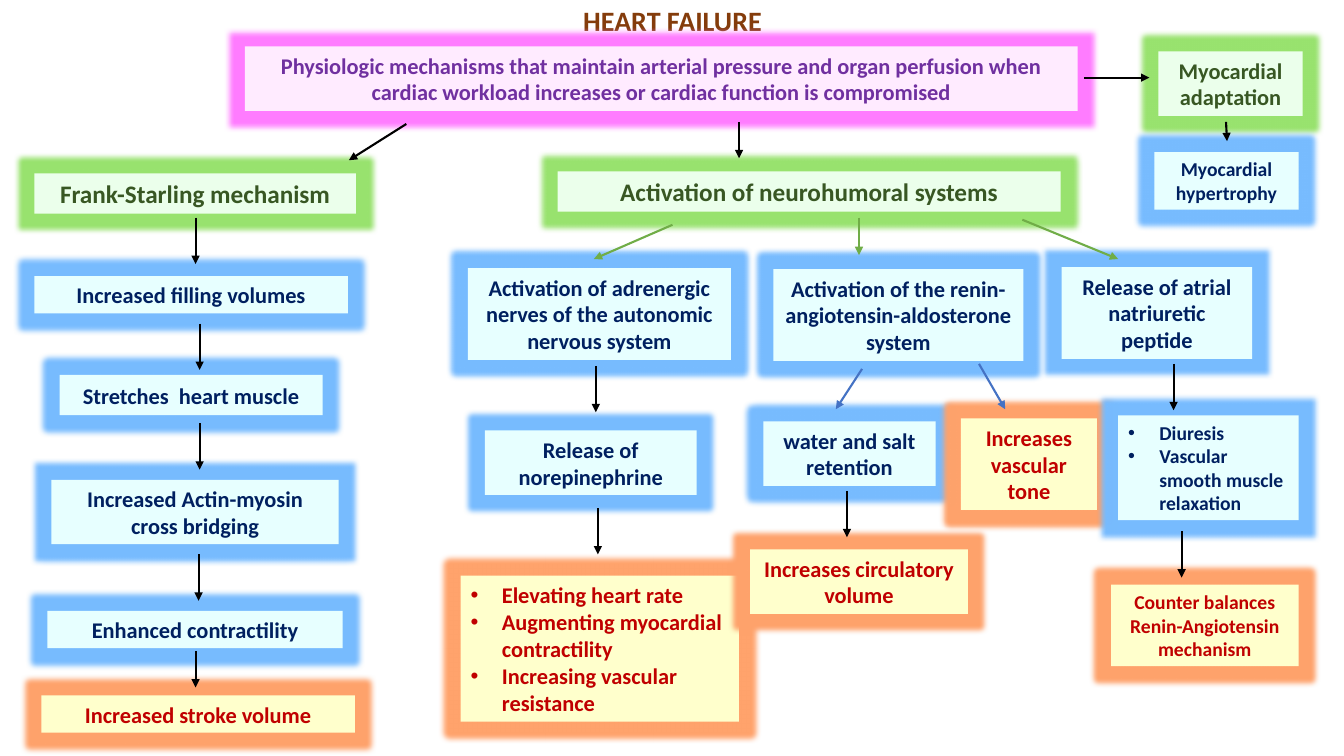
from dataclasses import dataclass

from pptx import Presentation
from pptx.dml.color import RGBColor
from pptx.enum.shapes import MSO_CONNECTOR as Link, MSO_SHAPE as Shape
from pptx.enum.text import MSO_ANCHOR as Anchor, PP_ALIGN as Align
from pptx.oxml.ns import qn
from pptx.util import Inches, Pt
from lxml.etree import SubElement


@dataclass(frozen=True)
class Style:
    fill: str
    glow: str
    ink: str


@dataclass(frozen=True)
class Theme:
    font: str = "Calibri"
    title_ink: str = "843C0B"
    black: str = "000000"
    green: str = "70AD47"
    blue: str = "4472C4"
    title_size: int = 20
    head_size: int = 18
    body_size: int = 16
    small_size: int = 14
    line_width: float = 1.5
    glow_radius: float = 0.11
    indent: float = 0.31
    topic: Style = Style("FFEBFF", "FF7CFF", "7030A0")
    mechanism: Style = Style("EBFFEB", "99E36F", "385723")
    step: Style = Style("E7FFFF", "78BCFF", "002060")
    outcome: Style = Style("FFFFCC", "FFA36C", "C00000")


THEME = Theme()


def write_text(frame, text, size, color, bullets=False):
    frame.word_wrap = True
    frame.vertical_anchor = Anchor.MIDDLE
    for index, line in enumerate(text.split("\n")):
        para = frame.paragraphs[0] if index == 0 else frame.add_paragraph()
        para.alignment = Align.LEFT if bullets else Align.CENTER
        if bullets:
            add_bullet(para)
        span = para.add_run()
        span.text = line
        span.font.name = THEME.font
        span.font.size = Pt(size)
        span.font.bold = True
        span.font.color.rgb = RGBColor.from_string(color)


def add_bullet(para):
    properties = para._p.get_or_add_pPr()
    indent = Inches(THEME.indent)
    properties.set("marL", str(indent))
    properties.set("indent", str(-indent))
    SubElement(properties, qn("a:buFont"), typeface="Arial")
    SubElement(properties, qn("a:buChar"), char="•")


def add_glow(box, color):
    effects = box._element.spPr.find(qn("a:effectLst"))
    glow = SubElement(effects, qn("a:glow"), rad=str(Inches(THEME.glow_radius)))
    SubElement(glow, qn("a:srgbClr"), val=color)


def add_title(page, text):
    box = page.shapes.add_textbox(Inches(0.92), Inches(0), Inches(11.5), Inches(0.4))
    write_text(box.text_frame, text, THEME.title_size, THEME.title_ink)


def add_box(page, style, place, text, size=THEME.body_size, bullets=False):
    box = page.shapes.add_shape(Shape.RECTANGLE, *map(Inches, place))
    box.shadow.inherit = False
    box.fill.solid()
    box.fill.fore_color.rgb = RGBColor.from_string(style.fill)
    box.line.fill.background()
    add_glow(box, style.glow)
    write_text(box.text_frame, text, size, style.ink, bullets)


def add_arrow(page, start, end, color=THEME.black):
    arrow = page.shapes.add_connector(Link.STRAIGHT, *map(Inches, start + end))
    arrow.line.color.rgb = RGBColor.from_string(color)
    arrow.line.width = Pt(THEME.line_width)
    properties = arrow._element.spPr
    SubElement(properties.find(qn("a:ln")), qn("a:tailEnd"), type="triangle")
    SubElement(properties, qn("a:effectLst"))


def add_mechanisms(page):
    add_box(page, THEME.topic, (2.43, 0.46, 8.26, 0.64),
            "Physiologic mechanisms that maintain arterial pressure and organ perfusion "
            "when cardiac workload increases or cardiac function is compromised")
    add_box(page, THEME.mechanism, (0.34, 1.72, 3.19, 0.4),
            "Frank-Starling mechanism", THEME.head_size)
    add_box(page, THEME.mechanism, (5.53, 1.7, 4.99, 0.4),
            "Activation of neurohumoral systems", THEME.head_size)
    add_box(page, THEME.mechanism, (11.49, 0.51, 1.43, 0.64), "Myocardial adaptation")
    add_box(page, THEME.step, (11.45, 1.51, 1.43, 0.57),
            "Myocardial hypertrophy", THEME.small_size)


def add_frank_starling(page):
    steps = [
        ((0.34, 2.74, 3.11, 0.37), "Increased filling volumes"),
        ((0.59, 3.72, 2.61, 0.4), "Stretches  heart muscle"),
        ((0.51, 4.76, 2.85, 0.64), "Increased Actin-myosin cross bridging"),
        ((0.47, 6.06, 2.93, 0.37), "Enhanced contractility"),
    ]
    for place, text in steps:
        add_box(page, THEME.step, place, text)
    add_box(page, THEME.outcome, (0.41, 6.9, 3.11, 0.37), "Increased stroke volume")


def add_neurohumoral(page):
    step, outcome, small = THEME.step, THEME.outcome, THEME.small_size
    add_box(page, step, (4.64, 2.66, 2.61, 0.91),
            "Activation of adrenergic nerves of the autonomic nervous system")
    add_box(page, step, (4.81, 4.27, 2.1, 0.64), "Release of norepinephrine")
    add_box(page, outcome, (4.57, 5.71, 2.76, 1.45),
            "Elevating heart rate\nAugmenting myocardial contractility\n"
            "Increasing vascular resistance", bullets=True)
    add_box(page, step, (7.67, 2.67, 2.48, 0.91),
            "Activation of the renin-angiotensin-aldosterone system")
    add_box(page, step, (7.57, 4.18, 1.71, 0.64), "water and salt retention")
    add_box(page, outcome, (7.44, 5.45, 2.16, 0.64), "Increases circulatory volume")
    add_box(page, outcome, (9.53, 4.15, 1.35, 0.91), "Increases vascular tone")
    add_box(page, step, (10.53, 2.65, 1.89, 0.91),
            "Release of atrial natriuretic peptide")
    add_box(page, outcome, (11.02, 5.8, 1.86, 0.81),
            "Counter balances Renin-Angiotensin mechanism", small)
    add_box(page, step, (11.09, 4.12, 1.79, 1.04),
            "Diuresis\nVascular smooth muscle relaxation", small, bullets=True)


def add_arrows(page):
    long_drop, short_drop = 0.46, 0.36
    long_starts = [(1.94, 2.16), (1.98, 3.21), (1.98, 4.2), (1.97, 5.5),
                   (5.91, 3.63), (5.93, 5.04), (8.4, 4.87),
                   (11.64, 3.61), (11.72, 5.27)]
    short_starts = [(7.33, 1.21), (1.94, 6.46)]
    for starts, drop in ((long_starts, long_drop), (short_starts, short_drop)):
        for left, top in starts:
            add_arrow(page, (left, top), (left, top + drop))
    add_arrow(page, (4.03, 1.23), (3.46, 1.59))
    add_arrow(page, (10.75, 0.77), (11.4, 0.77))
    add_arrow(page, (12.16, 1.21), (12.17, 1.4))

    branches = [
        ((6.67, 2.23), (5.89, 2.57), THEME.green),
        ((8.52, 2.16), (8.52, 2.53), THEME.green),
        ((10.14, 2.18), (11.09, 2.57), THEME.green),
        ((8.55, 3.66), (8.29, 4.06), THEME.blue),
        ((9.71, 3.61), (9.97, 4.06), THEME.blue),
    ]
    for start, end, color in branches:
        add_arrow(page, start, end, color)


def main():
    deck = Presentation()
    deck.slide_width, deck.slide_height = Inches(13.33), Inches(7.5)
    page = deck.slides.add_slide(deck.slide_layouts[6])
    add_title(page, "HEART FAILURE")
    add_mechanisms(page)
    add_frank_starling(page)
    add_neurohumoral(page)
    add_arrows(page)
    deck.save("out.pptx")


if __name__ == "__main__":
    main()
